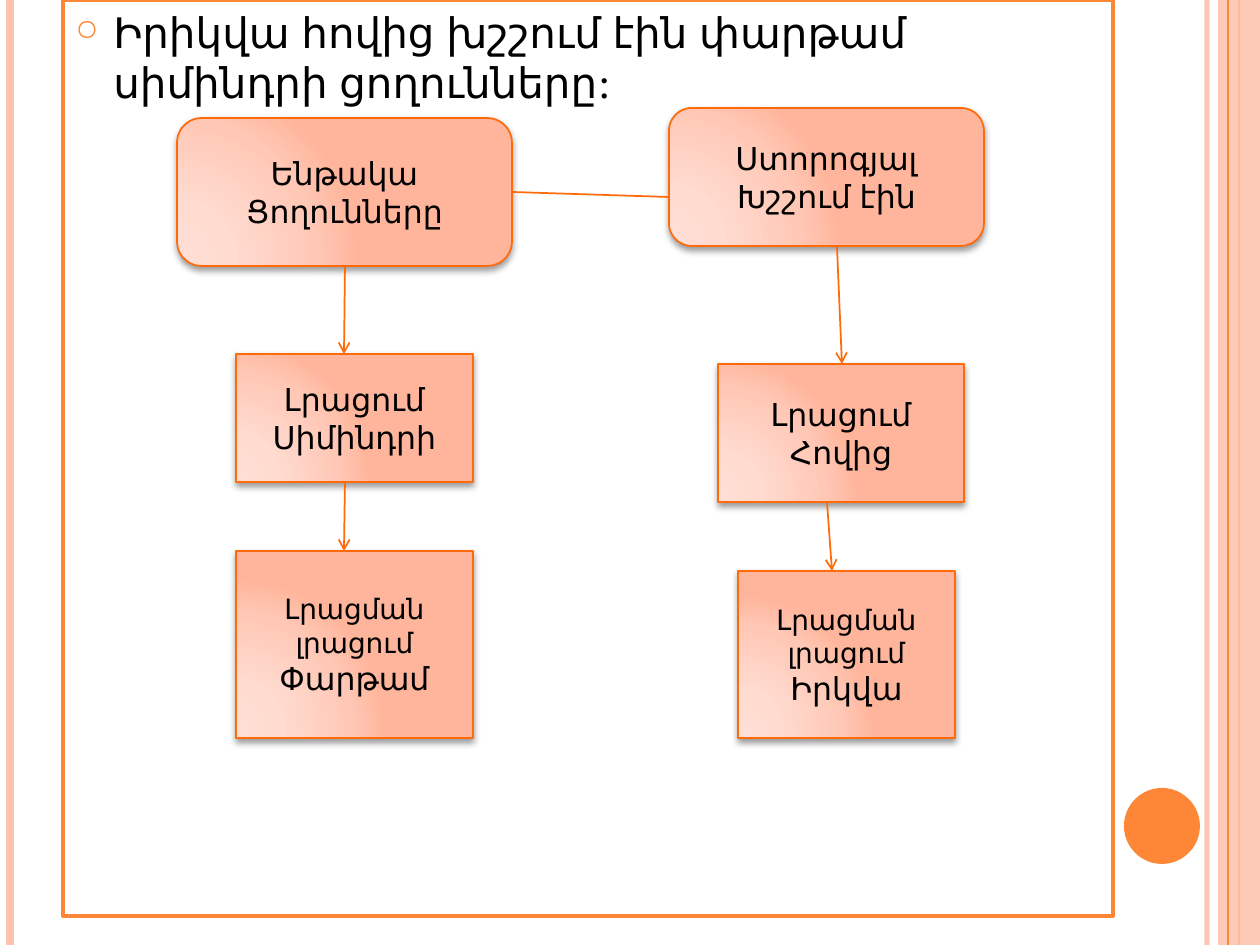
from lxml import etree
from pptx import Presentation
from pptx.dml.color import RGBColor
from pptx.enum.shapes import MSO_CONNECTOR, MSO_SHAPE
from pptx.enum.text import MSO_ANCHOR, PP_ALIGN
from pptx.oxml import parse_xml
from pptx.oxml.ns import nsdecls, qn
from pptx.util import Emu, Pt

PX_PER_INCH = 126
FONT = "TeX Gyre Schola"
COLORS = {
    "white": "FFFFFF",
    "black": "000000",
    "peach": "FEC3AE",
    "orange": "FE8637",
    "outline": "FF6B0A",
}
GRADIENT = [(0, "FFDED5"), (30, "FFDBD0"), (75, "FFC8B6"), (100, "FFB59B")]


def px(n):
    return Emu(914400 * n // PX_PER_INCH)


def rgb(name):
    return RGBColor.from_string(COLORS[name])


def add_alpha(fill_parent, percent):
    color = fill_parent.find(".//" + qn("a:srgbClr"))
    etree.SubElement(color, qn("a:alpha"), val=str(percent * 1000))


class SlideBuilder:
    def __init__(self, slide):
        self.slide = slide

    def shape(self, kind, box, fill=None, line=None, width=1):
        sp = self.slide.shapes.add_shape(kind, *map(px, box))
        sp.shadow.inherit = False
        if fill:
            sp.fill.solid()
            sp.fill.fore_color.rgb = rgb(fill)
        if line:
            sp.line.color.rgb = rgb(line)
            sp.line.width = Pt(width)
        else:
            sp.line.fill.background()
        return sp

    def line(self, start, end, color="outline", width=1, arrow=False):
        cn = self.slide.shapes.add_connector(
            MSO_CONNECTOR.STRAIGHT, *map(px, start + end))
        cn.line.color.rgb = rgb(color)
        cn.line.width = Pt(width)
        if arrow:
            etree.SubElement(cn.line._get_or_add_ln(), qn("a:tailEnd"), type="arrow")
        etree.SubElement(cn._element.spPr, qn("a:effectLst"))
        return cn

    def style(self, p, size):
        for r in p.runs:
            r.font.size = Pt(size)
            r.font.name = FONT
            r.font.color.rgb = rgb("black")

    def sentence(self, box, text):
        """Framed body area that opens with one bulleted sentence."""
        sp = self.shape(MSO_SHAPE.RECTANGLE, box, "white", "orange", 2)
        tf = sp.text_frame
        tf.word_wrap = True
        tf.vertical_anchor = MSO_ANCHOR.TOP
        tf.text = text
        p = tf.paragraphs[0]
        p.alignment = PP_ALIGN.LEFT
        p.space_before = Pt(6)
        self.style(p, 24)
        pPr = p._p.get_or_add_pPr()
        indent = px(38)
        pPr.set("marL", str(indent))
        pPr.set("indent", str(-indent))
        bullet_color = etree.SubElement(pPr, qn("a:buClr"))
        etree.SubElement(bullet_color, qn("a:srgbClr"), val=COLORS["orange"])
        etree.SubElement(pPr, qn("a:buSzPct"), val="70000")
        etree.SubElement(pPr, qn("a:buChar"), char="○")

    def node(self, kind, box, role, word, role_size=18):
        """Gradient box with a grammatical role above its word."""
        sp = self.shape(kind, box, line="outline")
        stops = "".join(
            f'<a:gs pos="{pos * 1000}"><a:srgbClr val="{color}"/></a:gs>'
            for pos, color in GRADIENT)
        spPr = sp._element.spPr
        spPr.find(qn("a:prstGeom")).addnext(parse_xml(
            f'<a:gradFill {nsdecls("a")} rotWithShape="1"><a:gsLst>{stops}</a:gsLst>'
            '<a:path path="circle"><a:fillToRect l="5000" t="100000" r="120000"'
            ' b="10000"/></a:path></a:gradFill>'))
        spPr.find(qn("a:effectLst")).append(parse_xml(
            f'<a:outerShdw {nsdecls("a")} blurRad="{Pt(4)}" dist="{Pt(2)}"'
            f' dir="5400000" rotWithShape="0"><a:srgbClr val="{COLORS["black"]}">'
            '<a:alpha val="40000"/></a:srgbClr></a:outerShdw>'))
        tf = sp.text_frame
        tf.word_wrap = True
        tf.vertical_anchor = MSO_ANCHOR.MIDDLE
        tf.text = f"{role}\n{word}"
        for p, size in zip(tf.paragraphs, (role_size, 18)):
            p.alignment = PP_ALIGN.CENTER
            self.style(p, size)


def add_side_bands(b):
    height = 945

    def stripe(x, color, width):
        return b.line((x, 0), (x, height), color, width)

    add_alpha(stripe(1207, "peach", 3)._element.spPr, 93)
    stripe(10, "peach", 4.5)
    stripe(1239, "orange", 1.5)
    band = b.shape(MSO_SHAPE.RECTANGLE, (1218, 0, 42, height), "peach")
    add_alpha(band._element.spPr, 87)
    stripe(1228, "orange", 0.75)
    b.shape(MSO_SHAPE.OVAL, (1124, 788, 76, 76), "orange")


def main():
    prs = Presentation()
    prs.slide_width, prs.slide_height = px(1260), px(945)
    b = SlideBuilder(prs.slides.add_slide(prs.slide_layouts[6]))

    add_side_bands(b)
    b.sentence((63, 0, 1050, 916),
               "Իրիկվա հովից խշշում էին փարթամ սիմինդրի ցողունները:")

    rounded, square = MSO_SHAPE.ROUNDED_RECTANGLE, MSO_SHAPE.RECTANGLE
    nodes = [
        (rounded, (177, 118, 335, 148), "Ենթակա", "Ցողունները"),
        (rounded, (669, 108, 315, 138), "Ստորոգյալ", "Խշշում էին"),
        (square, (236, 354, 237, 128), "Լրացում", "Սիմինդրի"),
        (square, (718, 364, 246, 138), "Լրացում", "Հովից"),
        (square, (236, 551, 237, 187), "Լրացման լրացում", "Փարթամ", 16),
        (square, (738, 571, 217, 167), "Լրացման լրացում", "Իրկվա", 16),
    ]
    for node in nodes:
        b.node(*node)

    b.line((512, 192), (669, 197))
    arrows = [
        ((345, 266), (344, 354)),
        ((837, 246), (842, 364)),
        ((345, 482), (344, 551)),
        ((827, 502), (832, 571)),
    ]
    for start, end in arrows:
        b.line(start, end, arrow=True)

    prs.save("out.pptx")


if __name__ == "__main__":
    main()
